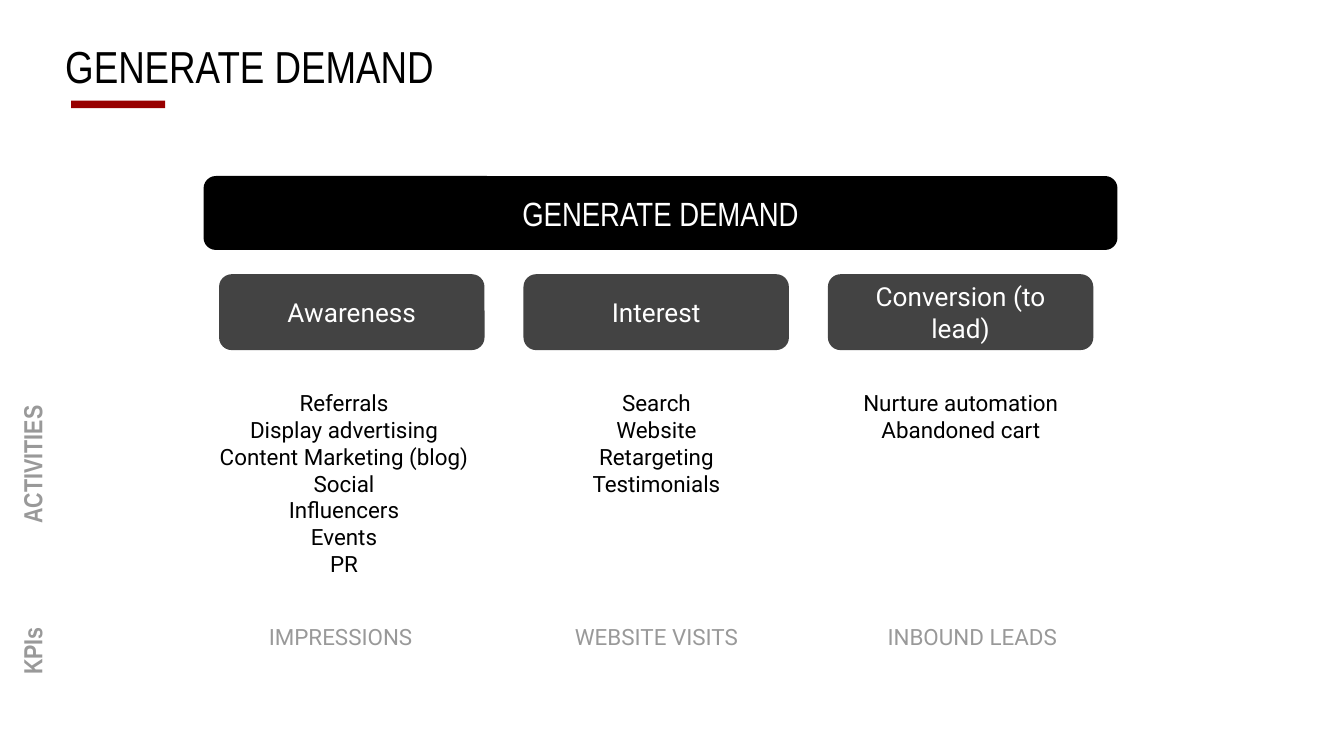
from pptx import Presentation
from pptx.dml.color import RGBColor
from pptx.enum.shapes import MSO_SHAPE
from pptx.enum.text import MSO_ANCHOR, MSO_AUTO_SIZE, PP_ALIGN
from pptx.util import Emu, Pt

RECT, ROUND = MSO_SHAPE.RECTANGLE, MSO_SHAPE.ROUNDED_RECTANGLE
TOP, MIDDLE = MSO_ANCHOR.TOP, MSO_ANCHOR.MIDDLE
LEFT, CENTER = PP_ALIGN.LEFT, PP_ALIGN.CENTER
BLACK = RGBColor(0x00, 0x00, 0x00)
WHITE = RGBColor(0xFF, 0xFF, 0xFF)
RED = RGBColor(0x98, 0x00, 0x00)
DARK = RGBColor(0x43, 0x43, 0x43)
GREY = RGBColor(0x99, 0x99, 0x99)
NARROW, ROBOTO = "Arial Narrow", "Roboto"
PX = 4572  # 200 px to the inch


def write(shape, text, size, font, color, align=CENTER, anchor=TOP, bold=False):
    frame = shape.text_frame
    frame.text = text
    frame.word_wrap = True
    frame.auto_size = MSO_AUTO_SIZE.NONE
    frame.vertical_anchor = anchor
    frame.margin_left = frame.margin_right = Emu(20 * PX)
    frame.margin_top = frame.margin_bottom = Emu(20 * PX)
    for para in frame.paragraphs:
        para.alignment = align
        for run in para.runs:
            run.font.size = Pt(size)
            run.font.name = font
            run.font.bold = bold
            run.font.color.rgb = color


def block(kind, box, fill):
    shape = slide.shapes.add_shape(kind, *[Emu(n * PX) for n in box])
    shape.shadow.inherit = False
    shape.fill.solid()
    shape.fill.fore_color.rgb = fill
    shape.line.fill.background()
    return shape


deck = Presentation()
deck.slide_width, deck.slide_height = Emu(2000 * PX), Emu(1125 * PX)
slide = deck.slides.add_slide(deck.slide_layouts[5])

# Title and its red rule
title = slide.shapes.title
title.left, title.top = Emu(77 * PX), Emu(37 * PX)
title.width, title.height = Emu(1864 * PX), Emu(126 * PX)
write(title, "GENERATE DEMAND", 24, NARROW, BLACK, LEFT)
block(RECT, (106, 150, 140, 11), RED)

# Banner across the stages
banner = block(ROUND, (303, 262, 1360, 110), BLACK)
write(banner, "GENERATE DEMAND", 18, NARROW, WHITE, anchor=MIDDLE)

# Stages: name, left and width of the list, activities, KPI
stages = [
    ("Awareness", 303, 418,
     ["Referrals", "Display advertising", "Content Marketing (blog)", "Social",
      "Influencers", "Events", "PR"], "IMPRESSIONS"),
    ("Interest", 780, 394,
     ["Search", "Website", "Retargeting", "Testimonials"], "WEBSITE VISITS"),
    ("Conversion (to lead)", 1233, 394,
     ["Nurture automation", "Abandoned cart"], "INBOUND LEADS"),
]
for i, (name, left, width, acts, kpi) in enumerate(stages):
    head = block(ROUND, (326 + 453 * i, 408, 395, 113), DARK)
    write(head, name, 14, ROBOTO, WHITE, anchor=MIDDLE)
    notes = [
        ((left, 559, width, 522), "\n".join(acts), BLACK),
        ((357 + 470 * i, 908, 300, 212), kpi, GREY),
    ]
    for box, text, color in notes:
        label = slide.shapes.add_textbox(*[Emu(n * PX) for n in box])
        write(label, text, 12, ROBOTO, color)

# Row labels, turned to read upwards
for text, box in [("KPIs", (-29, 893, 164, 98)),
                  ("ACTIVITIES", (-59, 638, 224, 98))]:
    label = slide.shapes.add_textbox(*[Emu(n * PX) for n in box])
    label.rotation = 270
    write(label, text, 14, NARROW, GREY, LEFT, bold=True)

deck.save("out.pptx")
